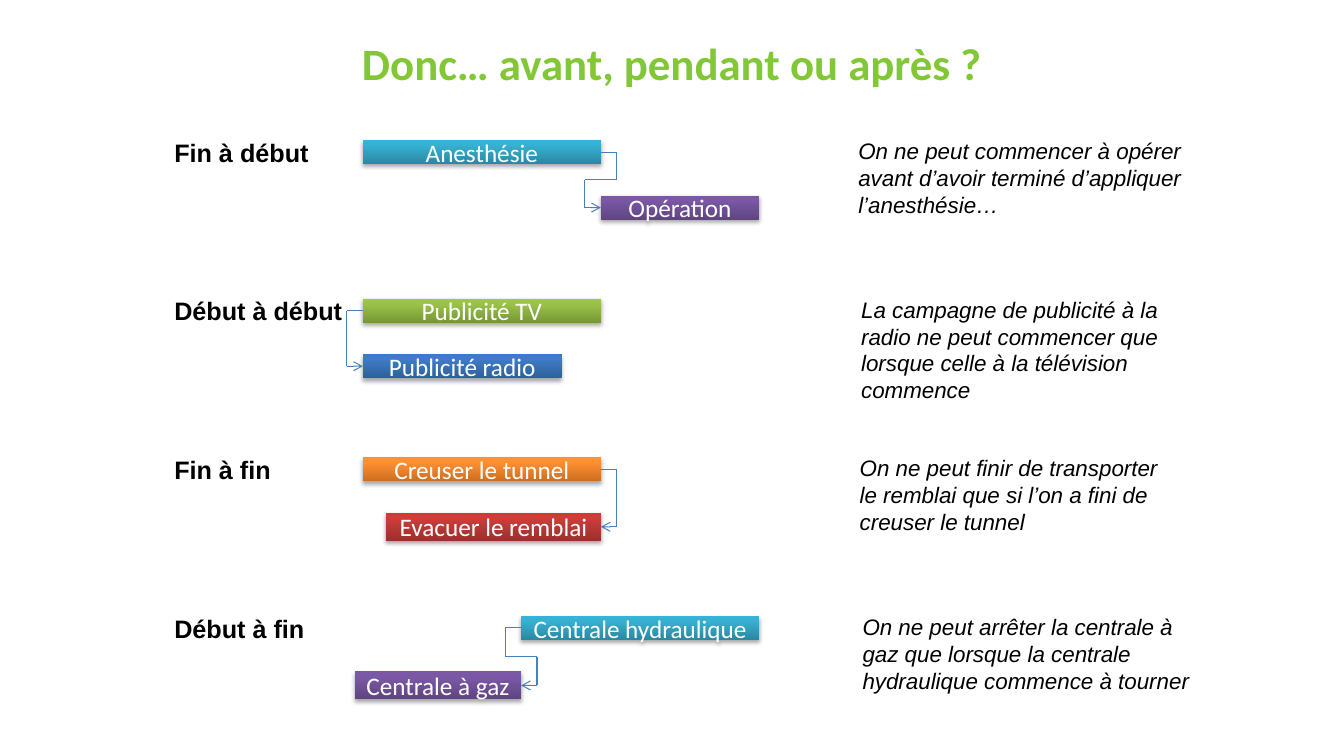
from copy import deepcopy
from dataclasses import dataclass
from itertools import pairwise

from lxml.etree import SubElement
from pptx import Presentation
from pptx.dml.color import RGBColor as RGB
from pptx.enum.shapes import MSO_CONNECTOR as CONN, MSO_SHAPE as SHAPE
from pptx.enum.text import MSO_ANCHOR as ANCHOR, MSO_AUTO_SIZE as AUTO, PP_ALIGN as ALIGN
from pptx.oxml.ns import qn
from pptx.util import Pt


@dataclass(frozen=True)
class Theme:
    title: str = "82C836"
    ink: str = "000000"
    white: str = "FFFFFF"
    link: str = "4B7EBC"
    # Gradient stops at 0, 80 and 100 %, bottom to top
    teal: tuple = ("2A88A2", "37B1D2", "34B4D6")
    purple: tuple = ("5F4480", "7B58A6", "7C57A8")
    green: tuple = ("779737", "9BC348", "9DC746")
    blue: tuple = ("2F5F99", "3D7CC7", "3A7CCB")
    orange: tuple = ("CC6E20", "FF9034", "FF9136")
    red: tuple = ("9C2F2D", "CB3E3A", "CE3B37")
    heading_font: str = "Calibri"
    body_font: str = "Arial"
    title_size: int = 32
    task_size: int = 18
    label_size: int = 18
    note_size: int = 16


LEFT, RIGHT = 1, 3  # connection sites of a rectangle
FIRST_TOP, ROW_PITCH = 100, 113.3
TASK_DROP, LINK_REACH = 39.7, 11.4


class Board:
    def __init__(self, slide, theme):
        self.slide, self.theme = slide, theme

    def style(self, p, text, font, size, color, bold=False, italic=False):
        p.text = text
        f = p.font
        f.name, f.size, f.bold, f.italic = font, Pt(size), bold, italic
        f.color.rgb = RGB.from_string(color)

    def title(self, text):
        t = self.theme
        tf = self.slide.shapes.add_textbox(Pt(48), Pt(21.6), Pt(864), Pt(46)).text_frame
        tf.word_wrap, tf.vertical_anchor = True, ANCHOR.MIDDLE
        p = tf.paragraphs[0]
        p.alignment = ALIGN.CENTER
        self.style(p, text, t.heading_font, t.title_size, t.title, bold=True)

    def text(self, x, y, w, h, text, size, **emphasis):
        tf = self.slide.shapes.add_textbox(Pt(x), Pt(y), Pt(w), Pt(h)).text_frame
        tf.word_wrap, tf.auto_size = False, AUTO.SHAPE_TO_FIT_TEXT
        self.style(tf.paragraphs[0], text, self.theme.body_font, size, self.theme.ink, **emphasis)

    def task(self, y, text, x, w, h, colors):
        sp = self.slide.shapes.add_shape(SHAPE.RECTANGLE, Pt(x), Pt(y), Pt(w), Pt(h))
        sp.line.fill.background()
        self.shade(sp, colors)
        self.drop_shadow(sp)
        tf = sp.text_frame
        tf.word_wrap, tf.vertical_anchor = True, ANCHOR.MIDDLE
        p = tf.paragraphs[0]
        p.alignment = ALIGN.CENTER
        self.style(p, text, self.theme.heading_font, self.theme.task_size, self.theme.white)
        return sp

    def shade(self, sp, colors):
        sp.fill.gradient()
        sp.fill.gradient_angle = 90
        stops = sp._element.spPr.find(qn("a:gradFill")).find(qn("a:gsLst"))
        stops.append(deepcopy(stops[-1]))
        for stop, position, color in zip(sp.fill.gradient_stops, (0, 0.8, 1), colors):
            stop.position = position
            stop.color.rgb = RGB.from_string(color)

    def drop_shadow(self, sp):
        sp.shadow.inherit = False
        effects = sp._element.spPr.find(qn("a:effectLst"))
        shadow = SubElement(effects, qn("a:outerShdw"), blurRad=str(Pt(3.1)),
                            dist=str(Pt(1.8)), dir="5400000", rotWithShape="0")
        black = SubElement(shadow, qn("a:srgbClr"), val=self.theme.ink)
        SubElement(black, qn("a:alpha"), val="35000")

    def line(self, start, end):
        cx = self.slide.shapes.add_connector(CONN.STRAIGHT, *start, *end)
        cx.line.width = Pt(0.75)
        cx.line.color.rgb = RGB.from_string(self.theme.link)
        SubElement(cx._element.spPr, qn("a:effectLst"))
        return cx

    def link(self, first, first_side, second, second_side):
        """Draw an elbowed arrow between the given sides of two tasks."""
        def port(sp, side):
            x, way = (sp.left, -1) if side == LEFT else (sp.left + sp.width, 1)
            return x, x + way * Pt(LINK_REACH), sp.top + sp.height // 2

        x1, out1, y1 = port(first, first_side)
        x2, out2, y2 = port(second, second_side)
        middle = (y1 + y2) // 2
        jog = [] if out1 == out2 else [(out1, middle), (out2, middle)]
        points = [(x1, y1), (out1, y1), *jog, (out2, y2), (x2, y2)]
        lines = [self.line(a, b) for a, b in pairwise(points)]
        lines[0].begin_connect(first, first_side)
        lines[-1].end_connect(second, second_side)
        SubElement(lines[-1].line._get_or_add_ln(), qn("a:tailEnd"), type="arrow")

    def dependency(self, y, label, label_w, first, first_side, second, second_side,
                   note, note_x, note_w):
        t = self.theme
        a = self.task(y, *first)
        b = self.task(y + TASK_DROP, *second)
        self.link(a, first_side, b, second_side)
        self.text(117.4, y - 5.7, label_w, 29, label, t.label_size, bold=True)
        note_h = 7.2 + 19.4 * len(note.splitlines())
        self.text(note_x, y - 5.5, note_w, note_h, note, t.note_size, italic=True)


def main():
    prs = Presentation()
    prs.slide_width, prs.slide_height = Pt(960), Pt(540)
    t = Theme()
    board = Board(prs.slides.add_slide(prs.slide_layouts[6]), t)
    board.title("Donc… avant, pendant ou après ?")
    # Task: text, left, width, height, colours
    dependencies = [
        ("Fin à début", 111.6,
         ("Anesthésie", 259.2, 170, 17.2, t.teal), RIGHT,
         ("Opération", 429.2, 113, 17.2, t.purple), LEFT,
         "On ne peut commencer à opérer\navant d’avoir terminé d’appliquer\nl’anesthésie…",
         606, 248.4),
        ("Début à début", 135.4,
         ("Publicité TV", 259.2, 170, 17.2, t.green), LEFT,
         ("Publicité radio", 259.2, 142, 17.2, t.blue), LEFT,
         "La campagne de publicité à la\nradio ne peut commencer que\n"
         "lorsque celle à la télévision\ncommence",
         608, 229),
        ("Fin à fin", 84.2,
         ("Creuser le tunnel", 259.2, 170, 17.2, t.orange), RIGHT,
         ("Evacuer le remblai", 275.8, 153.4, 20, t.red), RIGHT,
         "On ne peut finir de transporter\nle remblai que si l’on a fini de\ncreuser le tunnel",
         607, 230.4),
        ("Début à fin", 108.7,
         ("Centrale hydraulique", 372.2, 170, 17.2, t.teal), LEFT,
         ("Centrale à gaz", 253.4, 118.8, 20, t.purple), RIGHT,
         "On ne peut arrêter la centrale à\ngaz que lorsque la centrale\n"
         "hydraulique commence à tourner",
         609, 250.6),
    ]
    for i, row in enumerate(dependencies):
        board.dependency(FIRST_TOP + i * ROW_PITCH, *row)
    prs.save("out.pptx")


if __name__ == "__main__":
    main()
